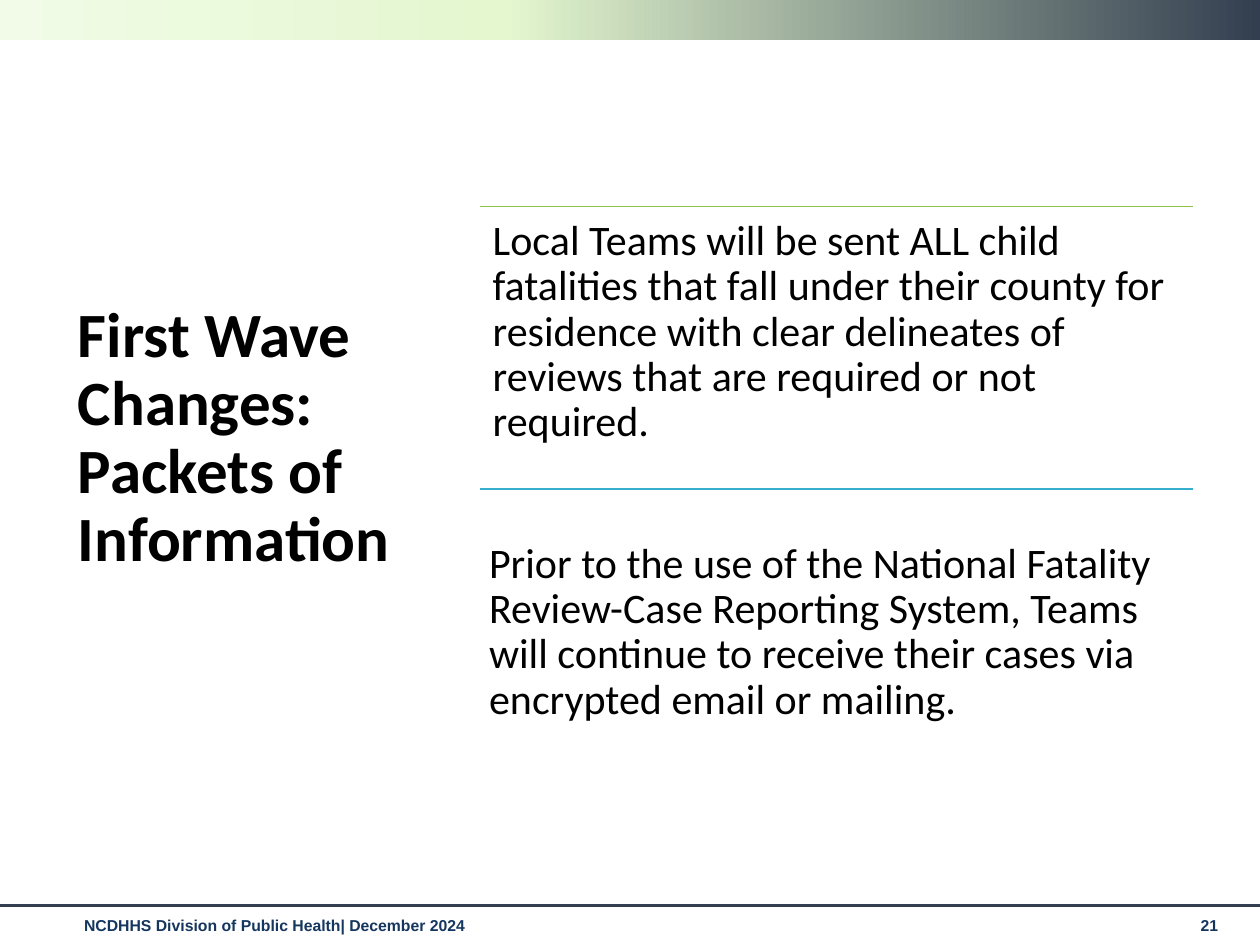
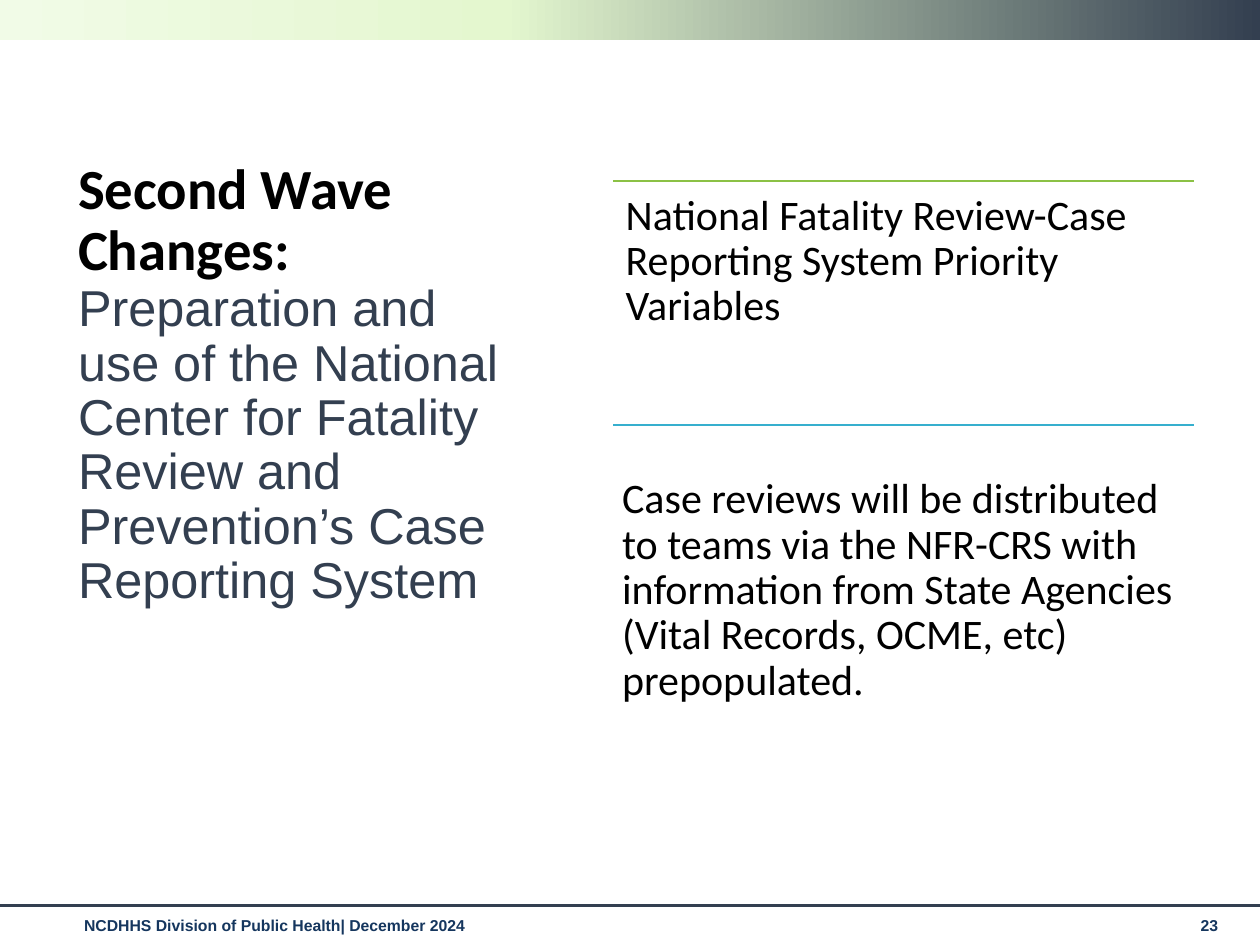
"""Build two slides on the first and second wave of changes."""
from copy import deepcopy

from lxml import etree
from pptx import Presentation
from pptx.dml.color import RGBColor
from pptx.enum.shapes import MSO_CONNECTOR, MSO_SHAPE
from pptx.enum.text import MSO_ANCHOR
from pptx.oxml.ns import qn
from pptx.util import Pt

RECT = MSO_SHAPE.RECTANGLE
LINE = MSO_CONNECTOR.STRAIGHT
TOP, MID = MSO_ANCHOR.TOP, MSO_ANCHOR.MIDDLE
WIDE, HIGH = 720, 540
HEAD, BODY = "Calibri", "Arial"
SHARE = 0.61
HUES = {
    "ink": "000000", "slate": "333F50", "navy": "15365E",
    "mint": "E4F7CF", "pale": "F1FBE7", "green": "8BC145", "blue": "36AFCE",
}
FADE = [(0, "pale"), (0.4, "mint"), (1, "slate")]
FOOT = "NCDHHS Division of Public Health| December 2024"


def hue(name):
    """Return the colour of that name."""
    return RGBColor.from_string(HUES[name])


def write(slide, box, runs, pad=(7.2, 3.6, 7.2, 3.6), anchor=TOP, lead=1.0):
    """Add a text box holding one paragraph of (text, size, font, hue, bold) runs."""
    frame = slide.shapes.add_textbox(*map(Pt, box)).text_frame
    frame.word_wrap = True
    frame.vertical_anchor = anchor
    (frame.margin_left, frame.margin_top,
     frame.margin_right, frame.margin_bottom) = map(Pt, pad)
    para = frame.paragraphs[0]
    para.line_spacing = lead
    for text, size, face, tint, bold in runs:
        run = para.add_run()
        run.text = text
        run.font.size, run.font.name, run.font.bold = Pt(size), face, bold
        run.font.color.rgb = hue(tint)


def rule(slide, left, top, wide, tint, weight):
    """Add a level line without shadow."""
    line = slide.shapes.add_connector(
        LINE, Pt(left), Pt(top), Pt(left + wide), Pt(top))
    line.line.color.rgb = hue(tint)
    line.line.width = Pt(weight)
    etree.SubElement(line._element.spPr, qn("a:effectLst"))


def band(slide, box):
    """Add the shaded band at the head of a slide."""
    shape = slide.shapes.add_shape(RECT, *map(Pt, box))
    shape.shadow.inherit = False
    shape.line.fill.background()
    shape.fill.gradient()
    shape.fill.gradient_angle = 0
    stops = shape._element.spPr.find(".//" + qn("a:gsLst"))
    stops.append(deepcopy(stops[0]))
    for stop, (place, tint) in zip(shape.fill.gradient_stops, FADE):
        stop.position = place
        stop.color.rgb = hue(tint)


def footer(slide, box, number):
    """Add the line, footer text and slide number."""
    left, top, wide, high = box
    rule(slide, left, top, wide, "slate", 1.75)
    for shift, span, text in ((41, 629, FOOT), (679, 32, number)):
        write(slide, (left + shift, top + 2, span, high - 2),
              [(text, 9, BODY, "navy", True)])


def points(slide, box, texts):
    """Stack two ruled texts in the box."""
    left, top, wide, high = box
    first = high * SHARE
    rows = (
        (top, first, "green", (7.2, 7.2, 7.2, 7.2)),
        (top + first, high - first, "blue", (5, 30, 5, 5)),
    )
    for text, (start, tall, tint, pad) in zip(texts, rows):
        rule(slide, left, start, wide, tint, 1)
        write(slide, (left, start, wide, tall),
              [(text, 24, HEAD, "ink", False)], pad, lead=0.9)


def page(deck, number, title, title_box, texts, text_box):
    """Add one slide with a title at left and two points at right."""
    slide = deck.slides.add_slide(deck.slide_layouts[6])
    footer(slide, (0, 517.5, WIDE, 23), number)
    band(slide, (0, 0, WIDE, 23))
    write(slide, title_box, title, anchor=MID, lead=0.9)
    points(slide, text_box, texts)


def main():
    """Build and save the deck."""
    deck = Presentation()
    deck.slide_width, deck.slide_height = Pt(WIDE), Pt(HIGH)
    page(
        deck, "21",
        [("First Wave Changes: Packets of Information", 36, HEAD, "ink", True)],
        (37.5, 50.5, 201.5, 401),
        ["Local Teams will be sent ALL child fatalities that fall under their "
         "county for residence with clear delineates of reviews that are "
         "required or not required.",
         "Prior to the use of the National Fatality Review-Case Reporting "
         "System, Teams will continue to receive their cases via encrypted "
         "email or mailing."],
        (274.5, 118, 407.5, 265))
    page(
        deck, "23",
        [("Second Wave Changes: ", 32.4, HEAD, "ink", True),
         ("Preparation and use of the National Center for Fatality Review and "
          "Prevention’s Case Reporting System", 28.8, BODY, "slate", False)],
        (37.5, 50.5, 261.5, 339),
        ["National Fatality Review-Case Reporting System Priority Variables",
         "Case reviews will be distributed to teams via the NFR-CRS with "
         "information from State Agencies (Vital Records, OCME, etc) "
         "prepopulated."],
        (350.5, 103.5, 332, 228.5))
    deck.save("out.pptx")


if __name__ == "__main__":
    main()
